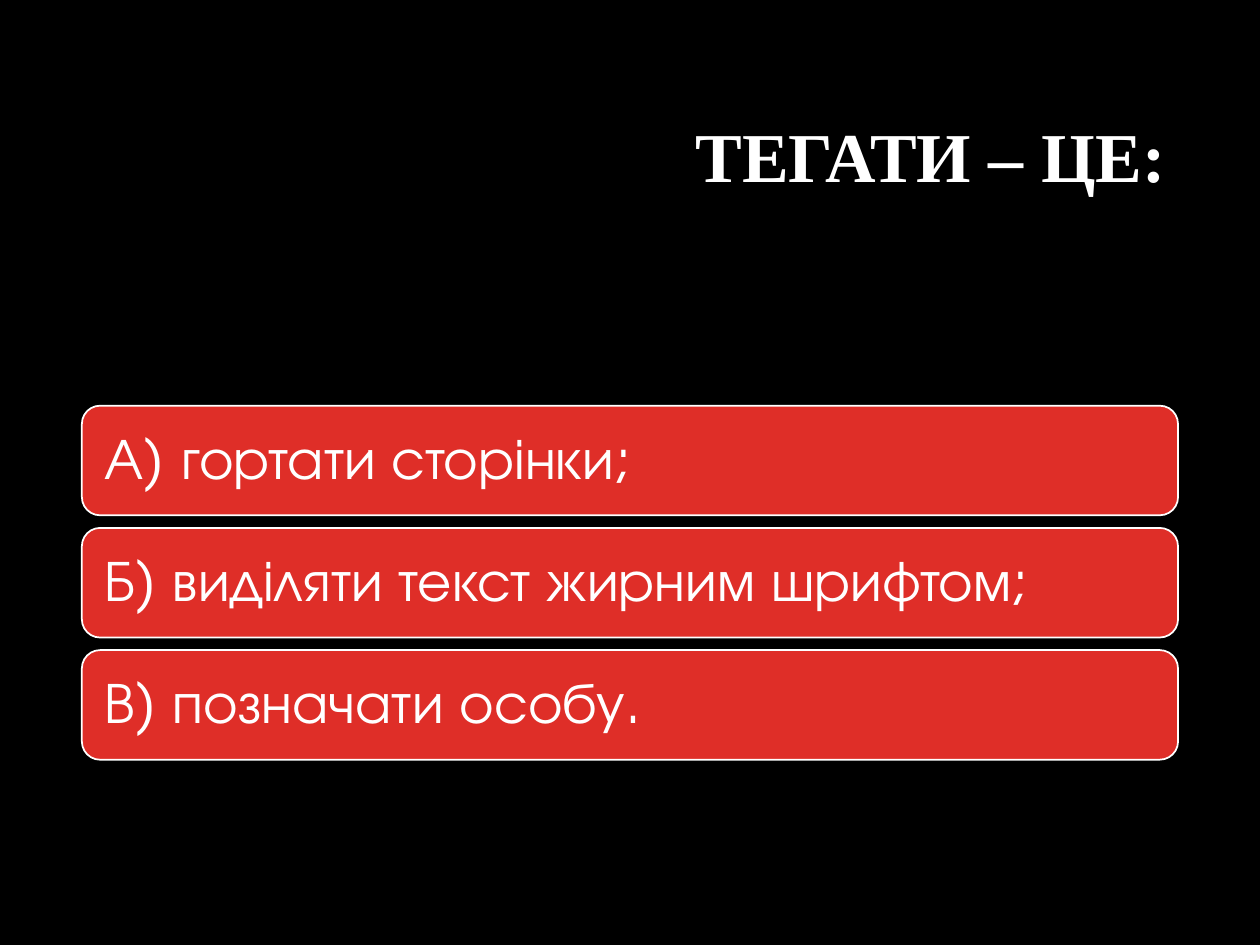
from dataclasses import dataclass

from pptx import Presentation
from pptx.dml.color import RGBColor
from pptx.enum.shapes import MSO_SHAPE as SHAPE
from pptx.enum.text import MSO_ANCHOR as ANCHOR, PP_ALIGN as ALIGN
from pptx.util import Inches, Pt

BLACK, WHITE, RED = "000000", "FFFFFF", "DF2E28"
LEFT, WIDTH = 0.65, 8.7
FIRST_TOP, HEIGHT, STEP = 3.22, 0.87, 0.97


@dataclass
class Answer:
    text: str
    top: float


def color(value: str) -> RGBColor:
    return RGBColor.from_string(value)


def write(tf, text: str, *, font: str, size: float, bold: bool = False,
          align=ALIGN.LEFT, anchor=ANCHOR.MIDDLE) -> None:
    tf.word_wrap = True
    tf.vertical_anchor = anchor
    p = tf.paragraphs[0]
    p.alignment = align
    p.line_spacing = 0.9
    r = p.add_run()
    r.text = text
    r.font.name = font
    r.font.size = Pt(size)
    r.font.bold = bold
    r.font.color.rgb = color(WHITE)


def add_answer(slide, answer: Answer) -> None:
    sp = slide.shapes.add_shape(SHAPE.ROUNDED_RECTANGLE, Inches(LEFT), Inches(answer.top),
                                Inches(WIDTH), Inches(HEIGHT))
    sp.shadow.inherit = False
    sp.fill.solid()
    sp.fill.fore_color.rgb = color(RED)
    sp.line.color.rgb = color(WHITE)
    sp.line.width = Pt(1)
    tf = sp.text_frame
    tf.margin_left = tf.margin_right = tf.margin_top = tf.margin_bottom = Inches(0.14)
    write(tf, answer.text, font="TeX Gyre Adventor", size=33)


def main() -> None:
    prs = Presentation()
    prs.slide_width, prs.slide_height = Inches(10), Inches(7.5)
    slide = prs.slides.add_slide(prs.slide_layouts[5])

    # Background
    slide.background.fill.solid()
    slide.background.fill.fore_color.rgb = color(BLACK)

    # Title
    title = slide.shapes.title
    title.left, title.top = Inches(4.69), Inches(0.84)
    title.width, title.height = Inches(4.66), Inches(1.41)
    title.text_frame.margin_top = Inches(0.13)
    write(title.text_frame, "ТЕГАТИ – ЦЕ:", font="Times New Roman", size=40,
          bold=True, align=ALIGN.RIGHT, anchor=ANCHOR.TOP)

    # Answer bars
    texts = ["А) гортати сторінки;", "Б) виділяти текст жирним шрифтом;", "В) позначати особу."]
    for i, text in enumerate(texts):
        add_answer(slide, Answer(text, FIRST_TOP + i * STEP))

    prs.save("out.pptx")


if __name__ == "__main__":
    main()
